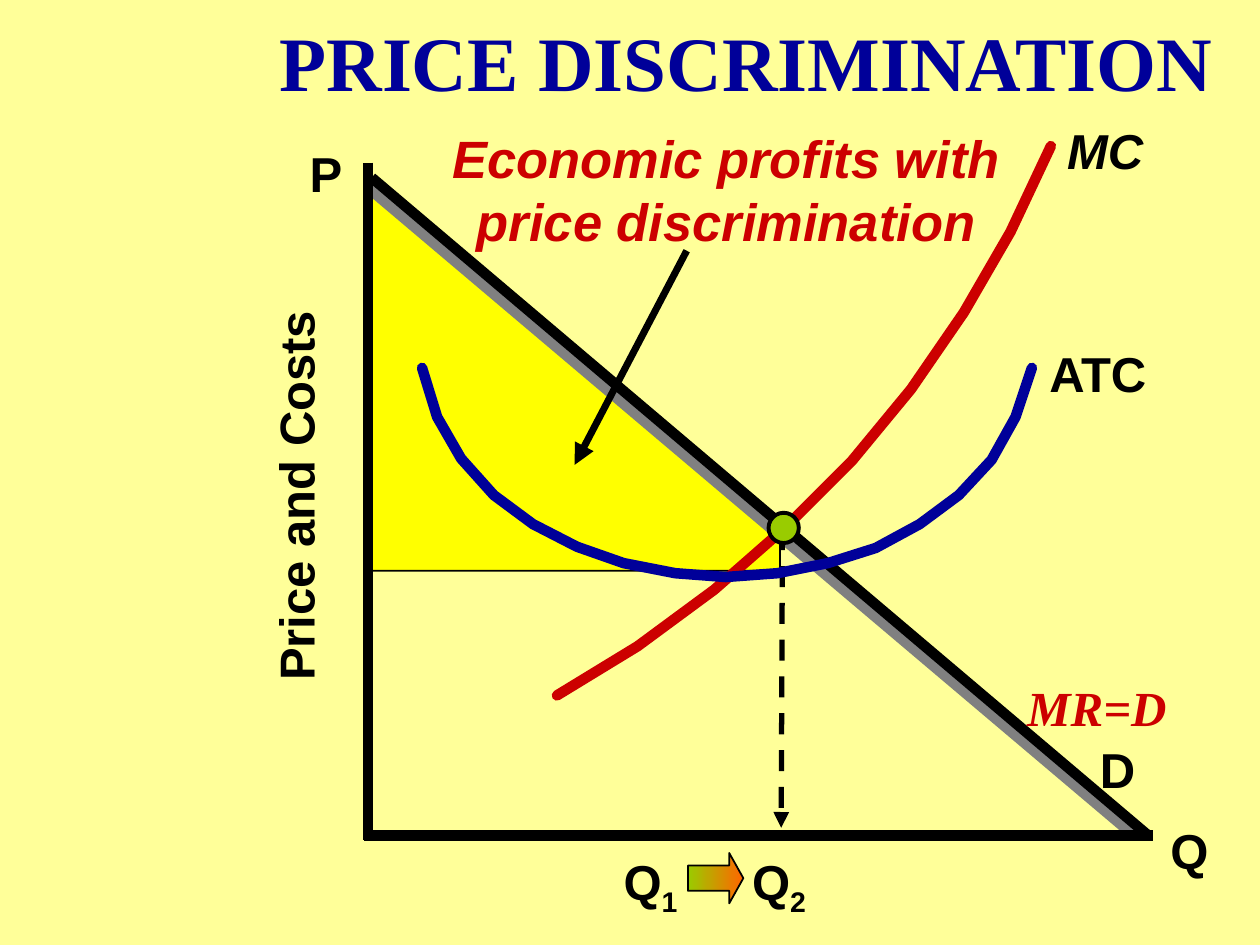
from lxml.etree import SubElement
from pptx import Presentation
from pptx.dml.color import RGBColor
from pptx.enum.dml import MSO_LINE
from pptx.enum.shapes import MSO_CONNECTOR, MSO_SHAPE
from pptx.enum.text import MSO_AUTO_SIZE, PP_ALIGN
from pptx.oxml.ns import qn
from pptx.util import Inches, Pt

CREAM = RGBColor(0xFF, 0xFF, 0x99)
YELLOW = RGBColor(0xFF, 0xFF, 0x00)
BLACK = RGBColor(0x00, 0x00, 0x00)
GRAY = RGBColor(0x80, 0x80, 0x80)
RED = RGBColor(0xCC, 0x00, 0x00)
NAVY = RGBColor(0x00, 0x00, 0x99)
GREEN = RGBColor(0x99, 0xCC, 0x00)
ORANGE = RGBColor(0xFF, 0x66, 0x00)

PROFIT_AREA = [(2.94, 4.53), (6.19, 4.53), (6.19, 4.25), (2.94, 1.46)]
MC_CURVE = [(4.42, 5.52), (5.06, 5.13), (5.67, 4.68), (6.23, 4.19), (6.76, 3.66),
            (7.23, 3.09), (7.65, 2.48), (8.02, 1.84), (8.34, 1.16)]
ATC_CURVE = [(3.35, 2.92), (3.47, 3.31), (3.66, 3.64), (3.92, 3.93), (4.23, 4.16),
             (4.58, 4.34), (4.95, 4.47), (5.36, 4.55), (5.76, 4.58), (6.17, 4.55),
             (6.57, 4.47), (6.95, 4.35), (7.30, 4.16), (7.61, 3.93), (7.87, 3.65),
             (8.06, 3.31), (8.19, 2.92)]

# start, end, colour, width, dashed, arrowhead
DEMAND_LINES = [
    ((2.91, 1.48), (9.01, 6.64), GRAY, 6, False, False),
    ((2.95, 1.41), (9.10, 6.62), BLACK, 6, False, False),
    ((6.21, 4.20), (6.20, 6.57), BLACK, 3, True, True),
]
AXES_AND_POINTER = [
    ((5.45, 1.99), (4.56, 3.69), BLACK, 4, False, True),
    ((2.92, 1.29), (2.92, 6.67), BLACK, 6, False, False),
    ((2.89, 6.63), (9.15, 6.63), BLACK, 6, False, False),
]

LABEL = {"name": "Arial", "size": Pt(28), "bold": True, "italic": False}
ITALIC = {**LABEL, "italic": True}
CALLOUT = {**ITALIC, "size": Pt(30)}
SERIF = {**ITALIC, "name": "Times New Roman"}
TITLE = {**LABEL, "name": "Times New Roman", "size": Pt(44)}

# lines, subscript, box, font, colour, rotation
TEXTS = [
    (["Q"], "", (9.19, 6.46, 0.50, 0.56), LABEL, BLACK, 0),
    (["D"], "", (8.63, 5.82, 0.48, 0.56), LABEL, BLACK, 0),
    (["MC"], "", (8.37, 0.91, 0.85, 0.56), ITALIC, BLACK, 0),
    (["ATC"], "", (8.23, 2.68, 1.00, 0.56), LABEL, BLACK, 0),
    (["P"], "", (2.36, 1.09, 0.46, 0.56), LABEL, BLACK, 0),
    (["Q"], "1", (4.85, 6.71, 0.65, 0.56), LABEL, BLACK, 0),
    (["Q"], "2", (5.87, 6.71, 0.65, 0.56), LABEL, BLACK, 0),
    (["Price and Costs"], "", (0.77, 3.65, 3.14, 0.56), LABEL, BLACK, 270),
    (["Economic profits with", "price discrimination"], "",
     (3.49, 0.95, 4.55, 1.10), CALLOUT, RED, 0),
    (["PRICE DISCRIMINATION"], "", (2.10, 0.07, 7.65, 0.83), TITLE, NAVY, 0),
    (["MR=D"], "", (8.05, 5.33, 1.31, 0.57), SERIF, RED, 0),
]


def set_line(s, color, width):
    s.line.color.rgb = color
    s.line.width = Pt(width)


def add_line(shapes, start, end, color, width, dashed, arrow):
    s = shapes.add_connector(MSO_CONNECTOR.STRAIGHT, *map(Inches, start + end))
    set_line(s, color, width)
    SubElement(s._element.spPr, qn("a:effectLst"))
    if dashed:
        s.line.dash_style = MSO_LINE.DASH
    if arrow:
        SubElement(s.line._get_or_add_ln(), qn("a:tailEnd"), type="triangle")


def add_outline(shapes, points, close):
    (x, y), *rest = [tuple(map(Inches, pt)) for pt in points]
    builder = shapes.build_freeform(x, y)
    builder.add_line_segments(rest, close=close)
    s = builder.convert_to_shape()
    s.shadow.inherit = False
    return s


def add_curve(shapes, points, color):
    """Draw an open, unfilled curve with round ends and joins."""
    s = add_outline(shapes, points, close=False)
    s.fill.background()
    set_line(s, color, 6)
    ln = s.line._get_or_add_ln()
    ln.set("cap", "rnd")
    SubElement(ln, qn("a:round"))


def add_preset(shapes, kind, box, width):
    s = shapes.add_shape(kind, *map(Inches, box))
    s.shadow.inherit = False
    set_line(s, BLACK, width)
    return s


def add_run(p, text, font, color):
    r = p.add_run()
    r.text = text
    for key, value in font.items():
        setattr(r.font, key, value)
    r.font.color.rgb = color
    return r


def add_text(shapes, lines, subscript, box, font, color, rotation):
    s = shapes.add_textbox(*map(Inches, box))
    s.rotation = rotation
    tf = s.text_frame
    tf.word_wrap = False
    tf.auto_size = MSO_AUTO_SIZE.SHAPE_TO_FIT_TEXT
    for i, line in enumerate(lines):
        p = tf.add_paragraph() if i else tf.paragraphs[0]
        if color != BLACK:
            p.alignment = PP_ALIGN.CENTER
        add_run(p, line, font, color)
    if subscript:
        r = add_run(p, subscript, font, color)
        r._r.get_or_add_rPr().set("baseline", "-25000")


def main():
    prs = Presentation()
    prs.slide_width, prs.slide_height = Inches(10), Inches(7.5)
    slide = prs.slides.add_slide(prs.slide_layouts[6])
    slide.background.fill.solid()
    slide.background.fill.fore_color.rgb = CREAM
    shapes = slide.shapes

    area = add_outline(shapes, PROFIT_AREA, close=True)
    area.fill.solid()
    area.fill.fore_color.rgb = YELLOW
    set_line(area, BLACK, 1)

    for line in DEMAND_LINES:
        add_line(shapes, *line)
    add_curve(shapes, MC_CURVE, RED)
    add_curve(shapes, ATC_CURVE, NAVY)
    for line in AXES_AND_POINTER:
        add_line(shapes, *line)
    for text in TEXTS:
        add_text(shapes, *text)

    point = add_preset(shapes, MSO_SHAPE.OVAL, (6.10, 4.07, 0.24, 0.24), 2.25)
    point.fill.solid()
    point.fill.fore_color.rgb = GREEN

    shift = add_preset(shapes, MSO_SHAPE.RIGHT_ARROW, (5.46, 6.77, 0.44, 0.40), 1)
    shift.adjustments[0], shift.adjustments[1] = 0.5, 0.28
    shift.fill.gradient()
    shift.fill.gradient_angle = 0
    for stop, position, color in zip(shift.fill.gradient_stops, (0, 1), (GREEN, ORANGE)):
        stop.position = position
        stop.color.rgb = color

    prs.save("out.pptx")


if __name__ == "__main__":
    main()
